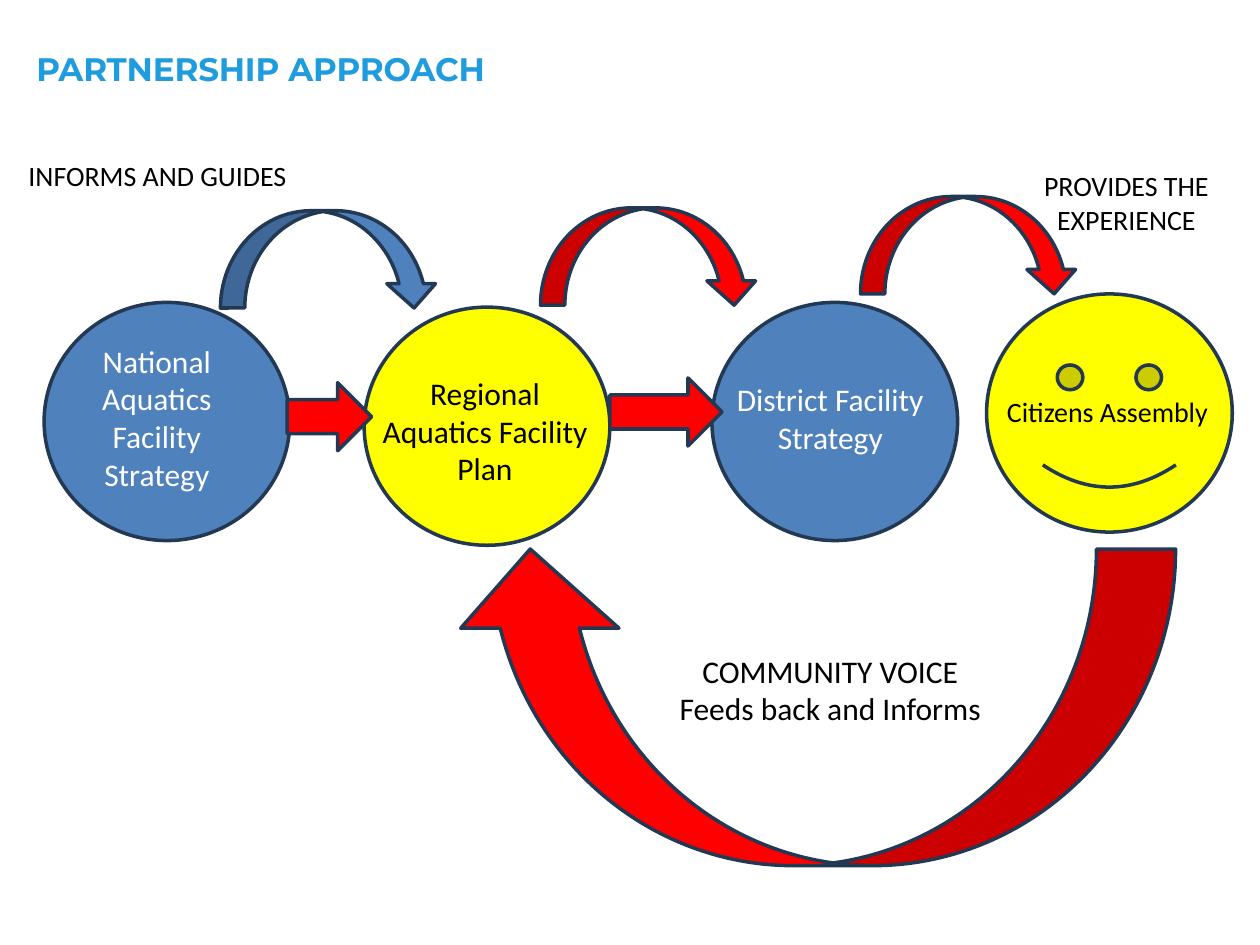
from pptx import Presentation
from pptx import util as u
from pptx.dml.color import RGBColor
from pptx.enum import shapes, text

SHAPE = shapes.MSO_SHAPE
CENTER = text.PP_ALIGN.CENTER

THEME = {
    "blue": RGBColor.from_string("4F81BD"),
    "yellow": RGBColor.from_string("FFFF00"),
    "red": RGBColor.from_string("FF0000"),
    "outline": RGBColor.from_string("233953"),
    "title": RGBColor.from_string("1F9CDE"),
    "black": RGBColor.from_string("000000"),
    "white": RGBColor.from_string("FFFFFF"),
    "title_size": u.Pt(32),
    "stage_size": u.Pt(18),
    "note_size": u.Pt(16),
    "line_width": u.Pt(2),
}
WIDTH, HEIGHT = u.Inches(10), u.Inches(7.5)

# All lengths below are percentages of the slide's width and height.
STAGE_SIZE = (19.5, 25.2)
CURVE_SIZE = (17.3, 10.3)
CURVE_LEFT, CURVE_STEP = 17.5, 25.4

STAGES = [
    (SHAPE.OVAL, "blue", 3.5, 32),
    (SHAPE.OVAL, "yellow", 28.9, 32.5),
    (SHAPE.OVAL, "blue", 56.5, 32),
    (SHAPE.SMILEY_FACE, "yellow", 78.3, 31.1),
]
LABELS = [
    (["National Aquatics Facility Strategy"], (3.8, 35.5, 17.3, 17.5), "stage_size", "white"),
    (["Regional Aquatics Facility Plan"], (29.3, 38.9, 18.4, 13.5), "stage_size", "black"),
    (["District Facility Strategy"], (57.4, 39.6, 17, 9.5), "stage_size", "white"),
    (["Citizens Assembly"], (77.6, 41.1, 20.6, 4.9), "note_size", "black"),
    (["INFORMS AND GUIDES"], (1, 16.1, 23, 4.9), "note_size", "black"),
    (["PROVIDES THE EXPERIENCE"], (77.9, 17.2, 23, 8.5), "note_size", "black"),
    (["COMMUNITY VOICE", "Feeds back and Informs"], (48.2, 68.3, 35.4, 9.5),
     "stage_size", "black"),
]
CURVES = [("blue", 22.3), ("red", 22), ("red", 20.8)]
STRAIGHT_ARROWS = [(22.8, 40.5, 6.7, 7.2), (48.4, 40, 8.9, 7.2)]
FEEDBACK = (35.8, 58.1, 57.5, 33.5)


def share(left, top, width, height):
    """Turn percentages of the slide into lengths."""
    return [round(part * full / 100) for part, full in
            zip((left, top, width, height), (WIDTH, HEIGHT) * 2)]


def add_outlined(slide, kind, box, color, rotation=0):
    sp = slide.shapes.add_shape(kind, *share(*box))
    sp.shadow.inherit = False
    sp.rotation = rotation
    sp.fill.solid()
    sp.fill.fore_color.rgb = THEME[color]
    sp.line.color.rgb = THEME["outline"]
    sp.line.width = THEME["line_width"]


def add_text(slide, lines, box, size, color, align=CENTER,
             anchor=text.MSO_ANCHOR.TOP, **font):
    """Add a wrapped text box, one paragraph a line, and return its text frame."""
    tf = slide.shapes.add_textbox(*share(*box)).text_frame
    tf.word_wrap = True
    tf.vertical_anchor = anchor
    tf.text = "\n".join(lines)
    style = {"name": "Calibri", "size": THEME[size], **font}
    for p in tf.paragraphs:
        p.alignment = align
        for r in p.runs:
            for key, value in style.items():
                setattr(r.font, key, value)
            r.font.color.rgb = THEME[color]
    return tf


def add_title(slide):
    tf = add_text(slide, ["PARTNERSHIP APPROACH"], (1.9, 1.9, 80.3, 12.3),
                  "title_size", "title", align=text.PP_ALIGN.LEFT,
                  anchor=text.MSO_ANCHOR.MIDDLE, name="Montserrat", bold=True)
    # The title is set as raised text, 30 % above the baseline.
    tf.paragraphs[0].runs[0]._r.get_or_add_rPr().set("baseline", "30000")


def main():
    prs = Presentation()
    prs.slide_width, prs.slide_height = WIDTH, HEIGHT
    slide = prs.slides.add_slide(prs.slide_layouts[6])

    add_title(slide)
    for kind, color, left, top in STAGES:
        add_outlined(slide, kind, (left, top, *STAGE_SIZE), color)
    for i, (color, top) in enumerate(CURVES):
        box = (CURVE_LEFT + i * CURVE_STEP, top, *CURVE_SIZE)
        add_outlined(slide, SHAPE.CURVED_DOWN_ARROW, box, color)
    for box in STRAIGHT_ARROWS:
        add_outlined(slide, SHAPE.RIGHT_ARROW, box, "red")
    add_outlined(slide, SHAPE.CURVED_DOWN_ARROW, FEEDBACK, "red", rotation=180)
    for label in LABELS:
        add_text(slide, *label)

    prs.save("out.pptx")


if __name__ == "__main__":
    main()
